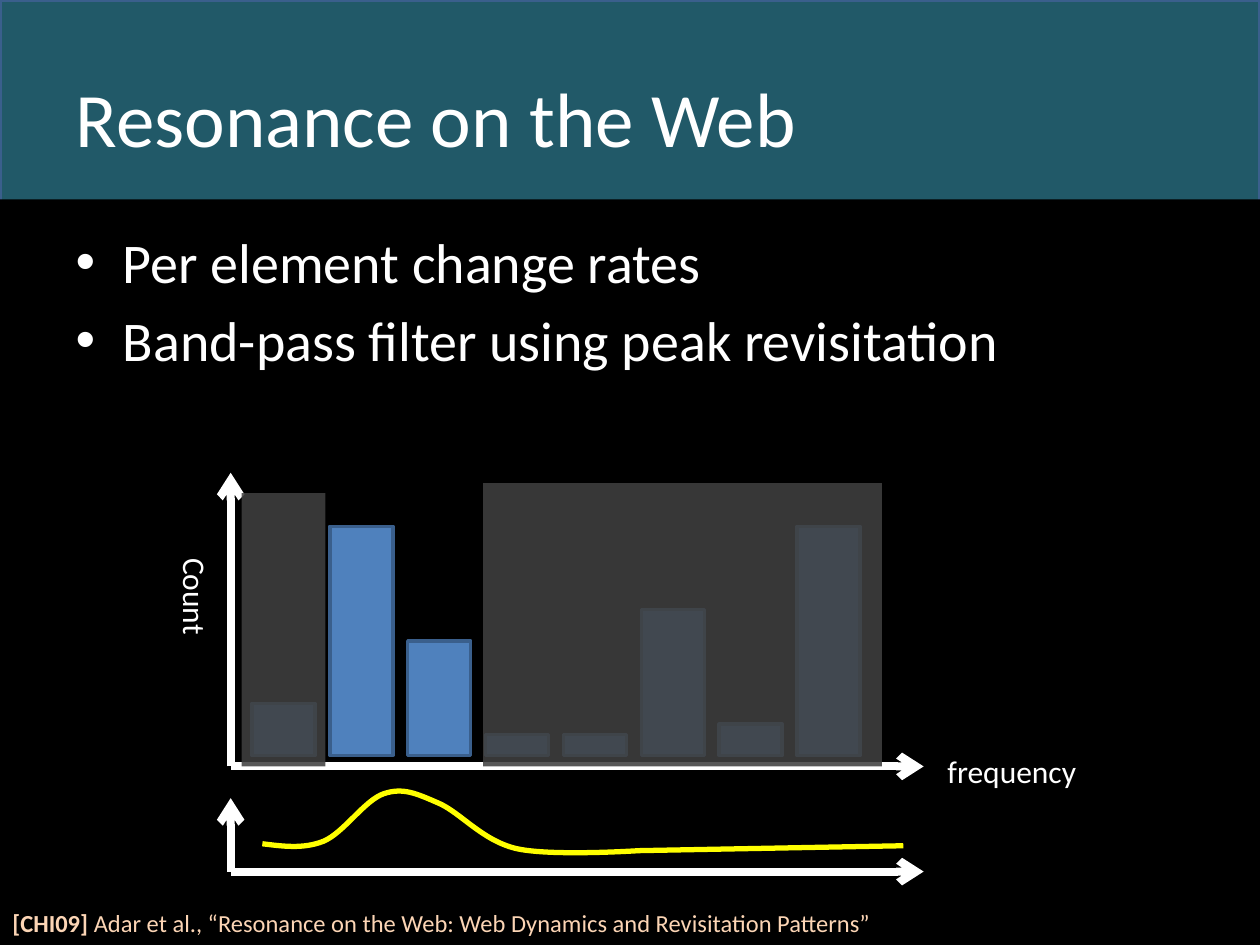
import pptx
import pptx.dml.color
import pptx.enum.shapes
import pptx.enum.text
import pptx.oxml.ns
import pptx.util
from lxml import etree
from pptx.util import Cm

COLORS = {
    "band": "215968",
    "black": "000000",
    "white": "FFFFFF",
    "bar": "4F81BD",
    "outline": "3A5F8C",
    "mask": "404040",
    "curve": "FFFF00",
    "citation": "FCD5B5",
}
FONT = "Calibri"
SLIDE_WIDTH, SLIDE_HEIGHT = 25.4, 19.05
HEADER_HEIGHT = 4.02
AXIS_X, AXIS_END = 4.65, 18.62
AXIS_Y, FILTER_AXIS_Y = 15.45, 17.57
BAR_LEFT, BAR_BASE = 5.08, 15.23
BAR_PITCH, BAR_WIDTH, BAR_UNIT = 1.57, 1.27, 0.21
BAR_UNITS = [5, 22, 11, 2, 2, 14, 3, 22]
CURVE_POINTS = [
    (5.29, 17.01),
    (5.7, 17.06), (6.11, 17.12), (6.52, 16.96),
    (6.93, 16.79), (7.35, 16.13), (7.74, 16),
    (8.13, 15.87), (8.4, 16), (8.84, 16.19),
    (9.28, 16.38), (9.71, 16.93), (10.38, 17.1),
    (11.05, 17.27), (12.88, 17.15), (12.88, 17.15),
    (18.21, 17.05),
]


def color(name):
    return pptx.dml.color.RGBColor.from_string(COLORS[name])


def add_run(paragraph, text, size, color_name="white", bold=False):
    run = paragraph.add_run()
    run.text = text
    run.font.name = FONT
    run.font.size = pptx.util.Pt(size)
    run.font.bold = bold
    run.font.color.rgb = color(color_name)


def place(shape, left, top, width, height):
    shape.left, shape.top = Cm(left), Cm(top)
    shape.width, shape.height = Cm(width), Cm(height)


def add_rectangle(slide, left, top, width, height, fill, outlined=False, opacity=100):
    shape = slide.shapes.add_shape(
        pptx.enum.shapes.MSO_SHAPE.RECTANGLE, Cm(left), Cm(top), Cm(width), Cm(height))
    shape.shadow.inherit = False
    shape.fill.solid()
    shape.fill.fore_color.rgb = color(fill)
    if outlined:
        shape.line.color.rgb = color("outline")
        shape.line.width = pptx.util.Pt(2)
    else:
        shape.line.fill.background()
    if opacity < 100:
        fill_color = shape.fill._xPr.find(".//" + pptx.oxml.ns.qn("a:srgbClr"))
        alpha = etree.SubElement(fill_color, pptx.oxml.ns.qn("a:alpha"))
        alpha.set("val", str(opacity * 1000))
    return shape


def add_axis(slide, start, end):
    connector = slide.shapes.add_connector(
        pptx.enum.shapes.MSO_CONNECTOR.STRAIGHT, *(Cm(value) for value in start + end))
    connector.line.color.rgb = color("white")
    connector.line.width = pptx.util.Pt(4.5)
    arrowhead = etree.SubElement(connector.line._get_or_add_ln(), pptx.oxml.ns.qn("a:tailEnd"))
    arrowhead.set("type", "arrow")
    etree.SubElement(connector._element.spPr, pptx.oxml.ns.qn("a:effectLst"))


def add_text(slide, left, top, width, height, runs, rotation=0):
    box = slide.shapes.add_textbox(Cm(left), Cm(top), Cm(width), Cm(height))
    box.rotation = rotation
    box.text_frame.word_wrap = True
    for run in runs:
        add_run(box.text_frame.paragraphs[0], *run)


def add_curve(slide, points):
    vertices = [(Cm(x), Cm(y)) for x, y in points]
    builder = slide.shapes.build_freeform(*vertices[0])
    builder.add_line_segments(vertices[1:], close=False)
    shape = builder.convert_to_shape()
    shape.shadow.inherit = False
    shape.fill.background()
    shape.line.color.rgb = color("curve")
    shape.line.width = pptx.util.Pt(3)
    segments = list(shape._element.iter(pptx.oxml.ns.qn("a:lnTo")))
    for first in range(0, len(segments) - 2, 3):
        bezier = etree.Element(pptx.oxml.ns.qn("a:cubicBezTo"))
        segments[first].addprevious(bezier)
        for segment in segments[first:first + 3]:
            bezier.append(segment[0])
            segment.getparent().remove(segment)


def add_background(slide):
    band = add_rectangle(slide, 0, 0, SLIDE_WIDTH, SLIDE_HEIGHT, "band", outlined=True)
    body = add_rectangle(
        slide, 0, HEADER_HEIGHT, SLIDE_WIDTH, SLIDE_HEIGHT - HEADER_HEIGHT, "black")
    for index, shape in enumerate((band, body), start=2):
        slide.shapes._spTree.insert(index, shape._element)


def fill_title(slide, text):
    title = slide.shapes.title
    place(title, 1.27, 0.76, 22.86, 3.18)
    title.text_frame.vertical_anchor = pptx.enum.text.MSO_ANCHOR.MIDDLE
    paragraph = title.text_frame.paragraphs[0]
    paragraph.alignment = pptx.enum.text.PP_ALIGN.LEFT
    add_run(paragraph, text, 44)


def fill_bullets(slide, items):
    body = slide.placeholders[1]
    place(body, 1.27, 4.45, 22.86, 12.57)
    frame = body.text_frame
    for index, item in enumerate(items):
        paragraph = frame.add_paragraph() if index else frame.paragraphs[0]
        paragraph.space_before = pptx.util.Pt(6.4 if index else 0)
        add_run(paragraph, item, 32)


def add_histogram(slide):
    add_axis(slide, (AXIS_X, AXIS_Y), (AXIS_X, 9.53))
    add_axis(slide, (AXIS_X, AXIS_Y), (AXIS_END, AXIS_Y))
    for index, units in enumerate(BAR_UNITS):
        height = units * BAR_UNIT
        add_rectangle(slide, BAR_LEFT + index * BAR_PITCH, BAR_BASE - height,
                      BAR_WIDTH, height, "bar", outlined=True)
    add_text(slide, 18.85, 15.03, 3.6, 1.06, [("frequency", 18)])
    add_text(slide, 2.12, 12.27, 3.6, 1.06, [("Count", 18)], rotation=90)
    for left, top, width in ((4.87, 9.94, 1.69), (9.74, 9.74, 8.04)):
        add_rectangle(slide, left, top, width, AXIS_Y - top, "mask", opacity=87)


def add_filter(slide):
    add_axis(slide, (AXIS_X, FILTER_AXIS_Y), (AXIS_X, 16.09))
    add_axis(slide, (AXIS_X, FILTER_AXIS_Y), (AXIS_END, FILTER_AXIS_Y))
    add_curve(slide, CURVE_POINTS)


def main():
    presentation = pptx.Presentation()
    presentation.slide_width = Cm(SLIDE_WIDTH)
    presentation.slide_height = Cm(SLIDE_HEIGHT)
    slide = presentation.slides.add_slide(presentation.slide_layouts[1])
    add_background(slide)
    fill_title(slide, "Resonance on the Web")
    fill_bullets(slide, ["Per element change rates", "Band-pass filter using peak revisitation"])
    add_histogram(slide)
    add_filter(slide)
    add_text(slide, 0, 18.19, 20.12, 0.86, [
        ("[CHI09] ", 14, "citation", True),
        ("Adar et al., “Resonance on the Web: Web Dynamics and Revisitation Patterns”",
         14, "citation"),
    ])
    presentation.save("out.pptx")


if __name__ == "__main__":
    main()
